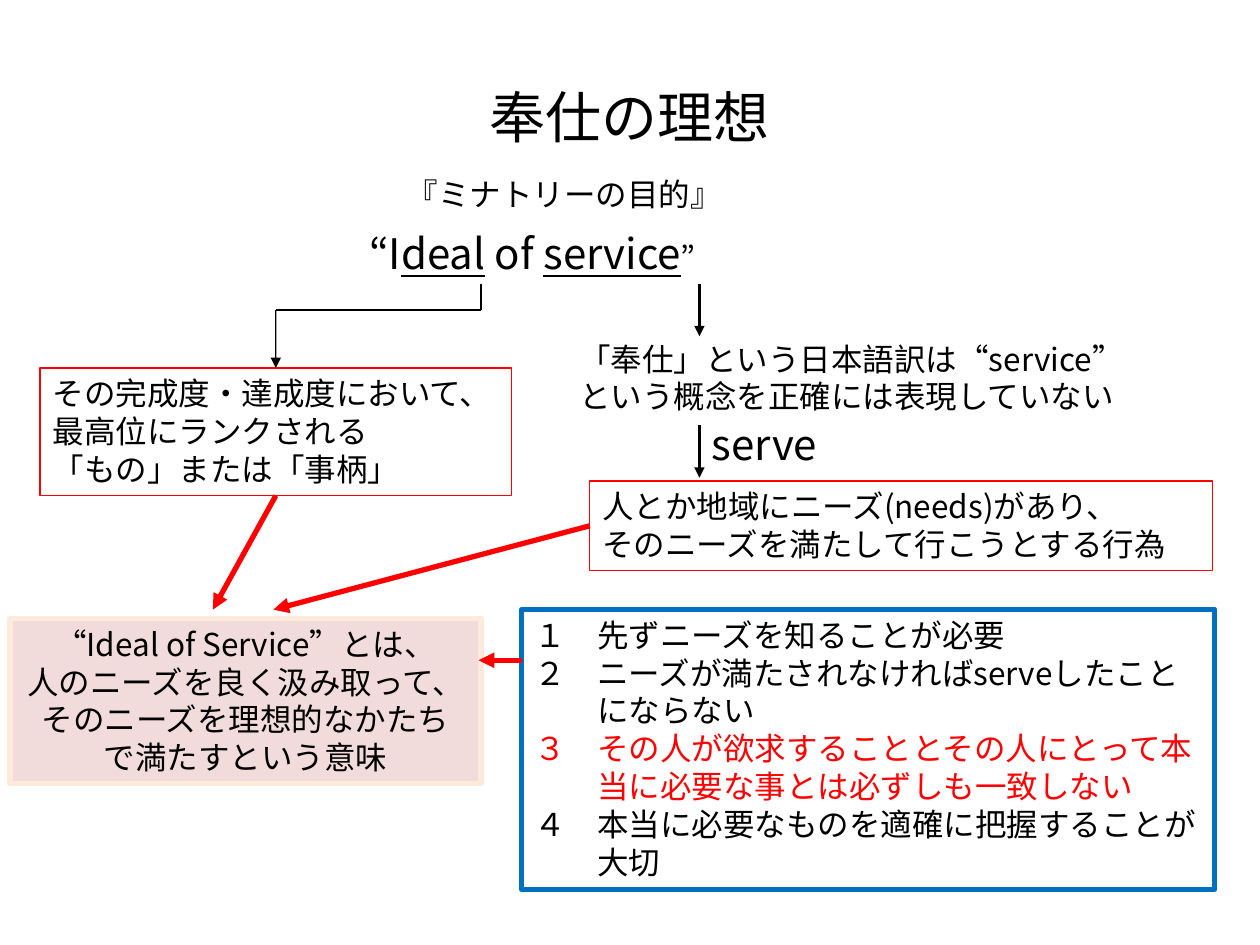
from dataclasses import dataclass
from typing import Optional

import pptx
import pptx.dml.color
import pptx.enum.shapes
import pptx.enum.text
import pptx.oxml
import pptx.oxml.ns
import pptx.util
from pptx.util import Cm

RGBColor = pptx.dml.color.RGBColor
ALIGN = pptx.enum.text.PP_ALIGN
BLACK = RGBColor(0x00, 0x00, 0x00)
RED = RGBColor(0xFF, 0x00, 0x00)
BLUE = RGBColor(0x00, 0x70, 0xC0)
PINK = RGBColor(0xF2, 0xDC, 0xDB)
CREAM = RGBColor(0xFD, 0xEA, 0xDA)
FONT = "Noto Sans CJK JP"
TOP, LEFT, BOTTOM = 0, 1, 2


@dataclass
class Passage:
    at: tuple[float, float, float, float]
    text: str
    size: float = 18
    align: pptx.enum.text.PP_ALIGN = ALIGN.LEFT
    line: Optional[RGBColor] = None
    line_width: float = 0.75
    fill: Optional[RGBColor] = None
    wrap: bool = False


@dataclass
class Link:
    start: tuple[float, float]
    end: tuple[float, float]
    color: RGBColor = BLACK
    width: float = 0.75
    arrow: bool = True


def format_run(run, size: float, color: RGBColor = BLACK) -> None:
    run.font.size = pptx.util.Pt(size)
    run.font.name = FONT
    run.font.color.rgb = color
    east_asian = pptx.oxml.ns.qn("a:ea")
    properties = run.font._element
    properties.find(pptx.oxml.ns.qn("a:latin")).addnext(
        properties.makeelement(east_asian, {"typeface": FONT}))


def draw_passage(slide, passage: Passage):
    area = [Cm(length) for length in passage.at]
    if passage.line is None:
        shape = slide.shapes.add_textbox(*area)
    else:
        shape = slide.shapes.add_shape(
            pptx.enum.shapes.MSO_SHAPE.RECTANGLE, *area)
        shape.shadow.inherit = False
        shape.line.color.rgb = passage.line
        shape.line.width = pptx.util.Pt(passage.line_width)
        if passage.fill is None:
            shape.fill.background()
        else:
            shape.fill.solid()
            shape.fill.fore_color.rgb = passage.fill
    frame = shape.text_frame
    frame.text = passage.text
    frame.word_wrap = passage.wrap
    if passage.wrap:
        frame.vertical_anchor = pptx.enum.text.MSO_ANCHOR.MIDDLE
    else:
        frame.vertical_anchor = pptx.enum.text.MSO_ANCHOR.TOP
        frame.auto_size = pptx.enum.text.MSO_AUTO_SIZE.SHAPE_TO_FIT_TEXT
    for paragraph in frame.paragraphs:
        paragraph.alignment = passage.align
        for run in paragraph.runs:
            format_run(run, passage.size)
    return shape


def draw_link(slide, link: Link):
    connector = slide.shapes.add_connector(
        pptx.enum.shapes.MSO_CONNECTOR.STRAIGHT,
        *[Cm(length) for length in link.start + link.end])
    connector.line.color.rgb = link.color
    connector.line.width = pptx.util.Pt(link.width)
    if link.arrow:
        outline = connector.line._get_or_add_ln()
        outline.append(outline.makeelement(
            pptx.oxml.ns.qn("a:tailEnd"), {"type": "triangle"}))
    properties = connector._element.spPr
    properties.append(properties.makeelement(
        pptx.oxml.ns.qn("a:effectLst"), {}))
    return connector


def underline_key_words(phrase) -> None:
    paragraph = phrase.text_frame.paragraphs[0]
    paragraph.text = ""
    for text, size, underlined in (
        ("“I", 24, False), ("deal", 24, True), (" of ", 24, False),
        ("service", 24, True), ("”", 18, False),
    ):
        run = paragraph.add_run()
        run.text = text
        format_run(run, size)
        run.font.underline = underlined


def style_steps(steps) -> None:
    step_number = ""
    for paragraph in steps.text_frame.paragraphs:
        if paragraph.text[0] in "１２３４":
            step_number = paragraph.text[0]
        else:
            paragraph._p.get_or_add_pPr().set("marL", str(pptx.util.Pt(36)))
        if step_number == "３":
            paragraph.runs[0].font.color.rgb = RED


def main() -> None:
    presentation = pptx.Presentation()
    presentation.slide_width = Cm(25.4)
    presentation.slide_height = Cm(19.05)
    slide = presentation.slides.add_slide(presentation.slide_layouts[6])

    for passage in (
        Passage((1.27, 0.76, 22.86, 3.18), "奉仕の理想", 32, ALIGN.CENTER,
                wrap=True),
        Passage((7.95, 3.4, 6.93, 1.02), "『ミナトリーの目的』"),
        Passage((11.43, 6.71, 13.2, 1.8),
                "「奉仕」という日本語訳は“service”\n"
                "という概念を正確には表現していない", wrap=True),
        Passage((14.1, 8.31, 3.07, 1.27), "serve", 24),
    ):
        draw_passage(slide, passage)

    phrase = draw_passage(slide, Passage(
        (7.19, 4.47, 7.52, 1.27), "“Ideal of service”", 24))
    underline_key_words(phrase)

    ideal = draw_passage(slide, Passage(
        (0.81, 7.42, 9.5, 2.57),
        "その完成度・達成度において、\n最高位にランクされる\n「もの」または「事柄」",
        line=RED))
    needs = draw_passage(slide, Passage(
        (11.89, 9.7, 12.55, 1.8),
        "人とか地域にニーズ(needs)があり、\nそのニーズを満たして行こうとする行為",
        line=RED))
    steps = draw_passage(slide, Passage(
        (10.52, 12.29, 13.97, 5.64),
        "１　先ずニーズを知ることが必要\n"
        "２　ニーズが満たされなければserveしたこと\n"
        "にならない\n"
        "３　その人が欲求することとその人にとって本\n"
        "当に必要な事とは必ずしも一致しない\n"
        "４　本当に必要なものを適確に把握することが\n"
        "大切",
        line=BLUE, line_width=3))
    style_steps(steps)
    draw_passage(slide, Passage(
        (0.2, 12.47, 9.5, 3.33),
        "“Ideal of Service”とは、\n人のニーズを良く汲み取って、\n"
        "そのニーズを理想的なかたち\nで満たすという意味",
        align=ALIGN.CENTER, line=CREAM, line_width=3, fill=PINK))

    for link in (
        Link((14.1, 5.72), (14.1, 6.78), width=1.5),
        Link((14.1, 8.56), (14.1, 9.63), width=1.5),
        Link((9.7, 5.72), (9.7, 6.25), arrow=False),
        Link((9.7, 6.25), (5.56, 6.25), arrow=False),
        Link((10.52, 13.31), (9.65, 13.31), RED, 3),
    ):
        draw_link(slide, link)

    draw_link(slide, Link((5.56, 6.25), (5.56, 7.42))).end_connect(ideal, TOP)
    draw_link(slide, Link((5.56, 9.99), (4.29, 12.29), RED, 3)).begin_connect(
        ideal, BOTTOM)
    draw_link(slide, Link((11.89, 10.6), (5.51, 12.29), RED, 3)).begin_connect(
        needs, LEFT)

    presentation.save("out.pptx")


if __name__ == "__main__":
    main()
